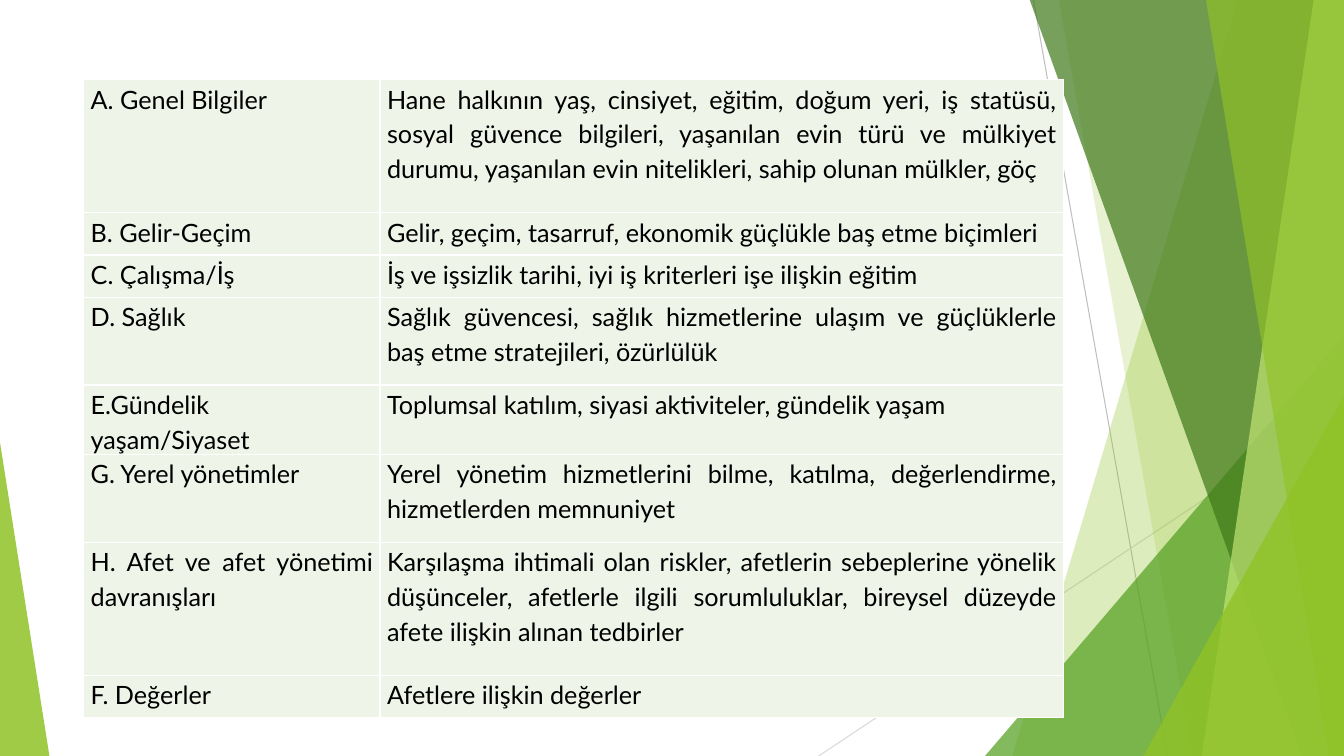
from dataclasses import dataclass

from lxml.etree import SubElement
from pptx import Presentation
from pptx.dml.color import RGBColor
from pptx.enum.shapes import MSO_CONNECTOR as Connector, MSO_SHAPE as Preset
from pptx.enum.text import PP_ALIGN as Align
from pptx.oxml import parse_xml
from pptx.oxml.ns import nsdecls, qn
from pptx.util import Inches, Pt


@dataclass(frozen=True)
class Theme:
    """Colours, font and type sizes."""
    font: str = "Lato"
    text_size: float = 18
    line_spacing: float = 1.15
    text: str = "000000"
    cell: str = "EEF4E8"
    border: str = "FFFFFF"
    border_width: float = 1
    ray_width: float = 0.75
    dark_ray: str = "BFBFBF"
    light_ray: str = "D9D9D9"
    lime: str = "90C226"
    leaf: str = "54A021"
    forest: str = "3F7819"
    pale: str = "C0E474"


@dataclass(frozen=True)
class Ray:
    """A thin straight line."""
    start: tuple[float, float]
    end: tuple[float, float]
    color: str


@dataclass(frozen=True)
class Band:
    """A slanted band that reaches the right edge."""
    top_x: float
    bottom_x: float
    color: str
    opacity: int


@dataclass(frozen=True)
class Wedge:
    """A right triangle standing on the bottom edge."""
    left: float
    top: float
    width: float
    apex: float
    color: str
    opacity: int


@dataclass(frozen=True)
class Topic:
    """A table row: heading, details and height."""
    heading: str
    details: str
    height: float


THEME = Theme()
WIDTH, HEIGHT, BLEED = 13.33, 7.5, -0.01
TABLE_LEFT, TABLE_TOP = 0.83, 0.79
COLUMNS = (2.94, 6.78)
CELL_INSET = 0.07
ONE_LINE, TWO_LINES, THREE_LINES = 0.42, 0.87, 1.32

DECORATION = (
    Ray((10.25, 0), (11.58, HEIGHT), THEME.dark_ray),
    Ray((WIDTH, 4.03), (8.12, HEIGHT), THEME.light_ray),
    Band(12.28, 10.04, THEME.lime, 30),
    Band(10.5, 11.83, THEME.lime, 20),
    Wedge(9.77, 3.33, 3.56, 1, THEME.leaf, 72),
    Band(10.21, 12.91, THEME.forest, 70),
    Band(13.03, 11.92, THEME.pale, 70),
    Band(11.96, 13.18, THEME.lime, 65),
    Wedge(11.34, 3.93, 1.99, 1, THEME.lime, 80),
    Wedge(0, 4.39, 0.49, 0, THEME.lime, 85),
)

TOPICS = (
    Topic("A. Genel Bilgiler",
          "Hane halkının yaş, cinsiyet, eğitim, doğum yeri, iş statüsü, sosyal güvence bilgileri, "
          "yaşanılan evin türü ve mülkiyet durumu, yaşanılan evin nitelikleri, "
          "sahip olunan mülkler, göç ", THREE_LINES),
    Topic("B. Gelir-Geçim",
          "Gelir, geçim, tasarruf, ekonomik güçlükle baş etme biçimleri", ONE_LINE),
    Topic("C. Çalışma/İş",
          "İş ve işsizlik tarihi, iyi iş kriterleri işe ilişkin eğitim", ONE_LINE),
    Topic("D. Sağlık",
          "Sağlık güvencesi, sağlık hizmetlerine ulaşım ve güçlüklerle baş etme stratejileri, "
          "özürlülük", TWO_LINES),
    Topic("E.Gündelik yaşam/Siyaset",
          "Toplumsal katılım, siyasi aktiviteler, gündelik yaşam", ONE_LINE),
    Topic("G. Yerel yönetimler",
          "Yerel yönetim hizmetlerini bilme, katılma, değerlendirme, hizmetlerden memnuniyet",
          TWO_LINES),
    Topic("H. Afet ve afet yönetimi davranışları",
          "Karşılaşma ihtimali olan riskler, afetlerin sebeplerine yönelik düşünceler, afetlerle "
          "ilgili sorumluluklar, bireysel düzeyde afete ilişkin alınan tedbirler", THREE_LINES),
    Topic("F. Değerler", "Afetlere ilişkin değerler", ONE_LINE),
)


def paint(shape, color: str, opacity: int) -> None:
    """Give a shape a translucent fill with no line or shadow."""
    shape.shadow.inherit = False
    shape.line.fill.background()
    shape.fill.solid()
    shape.fill.fore_color.rgb = RGBColor.from_string(color)
    color_element = shape.fill._xPr.find(qn("a:solidFill"))[0]
    SubElement(color_element, qn("a:alpha")).set("val", str(opacity * 1000))


def draw_ray(slide, ray: Ray) -> None:
    """Draw a thin line."""
    points = [Inches(value) for value in ray.start + ray.end]
    connector = slide.shapes.add_connector(Connector.STRAIGHT, *points)
    connector.line.color.rgb = RGBColor.from_string(ray.color)
    connector.line.width = Pt(THEME.ray_width)
    SubElement(connector._element.spPr, qn("a:effectLst"))


def draw_band(slide, band: Band) -> None:
    """Draw a band from the top to the bottom of the slide."""
    corners = ((WIDTH, BLEED), (WIDTH, HEIGHT), (band.bottom_x, HEIGHT))
    builder = slide.shapes.build_freeform(Inches(band.top_x), Inches(BLEED))
    builder.add_line_segments([(Inches(x), Inches(y)) for x, y in corners])
    paint(builder.convert_to_shape(), band.color, band.opacity)


def draw_wedge(slide, wedge: Wedge) -> None:
    """Draw a triangle down to the bottom of the slide."""
    shape = slide.shapes.add_shape(
        Preset.ISOSCELES_TRIANGLE, Inches(wedge.left), Inches(wedge.top),
        Inches(wedge.width), Inches(HEIGHT - wedge.top))
    shape.adjustments[0] = wedge.apex
    paint(shape, wedge.color, wedge.opacity)


def write_text(frame, text: str, *, size: float = THEME.text_size, color: str = THEME.text,
               align: Align = Align.JUSTIFY) -> None:
    """Write one formatted paragraph into a text frame."""
    paragraph = frame.paragraphs[0]
    paragraph.alignment = align
    paragraph.line_spacing = THEME.line_spacing
    run = paragraph.add_run()
    run.text = text
    run.font.name = THEME.font
    run.font.size = Pt(size)
    run.font.color.rgb = RGBColor.from_string(color)


def format_cell(cell) -> None:
    """Set the insets, fill and borders of a table cell."""
    cell.margin_left = cell.margin_right = Inches(CELL_INSET)
    cell.margin_top = cell.margin_bottom = 0
    cell.fill.solid()
    cell.fill.fore_color.rgb = RGBColor.from_string(THEME.cell)
    properties = cell._tc.get_or_add_tcPr()
    for index, side in enumerate("LRTB"):
        properties.insert(index, parse_xml(
            f'<a:ln{side} {nsdecls("a")} w="{Pt(THEME.border_width)}"><a:solidFill>'
            f'<a:srgbClr val="{THEME.border}"/></a:solidFill></a:ln{side}>'))


def draw_table(slide, topics: tuple[Topic, ...]) -> None:
    """Draw the table of topics."""
    height = sum(topic.height for topic in topics)
    table = slide.shapes.add_table(
        len(topics), len(COLUMNS), Inches(TABLE_LEFT), Inches(TABLE_TOP),
        Inches(sum(COLUMNS)), Inches(height)).table
    table.first_row = table.horz_banding = False
    for column, width in zip(table.columns, COLUMNS):
        column.width = Inches(width)
    for row, topic in zip(table.rows, topics):
        row.height = Inches(topic.height)
        for cell, text in zip(row.cells, (topic.heading, topic.details)):
            format_cell(cell)
            write_text(cell.text_frame, text)


def main() -> None:
    """Build and save the slide."""
    presentation = Presentation()
    presentation.slide_width, presentation.slide_height = Inches(WIDTH), Inches(HEIGHT)
    slide = presentation.slides.add_slide(presentation.slide_layouts[6])
    painters = {Ray: draw_ray, Band: draw_band, Wedge: draw_wedge}
    for item in DECORATION:
        painters[type(item)](slide, item)
    draw_table(slide, TOPICS)
    presentation.save("out.pptx")


if __name__ == "__main__":
    main()
